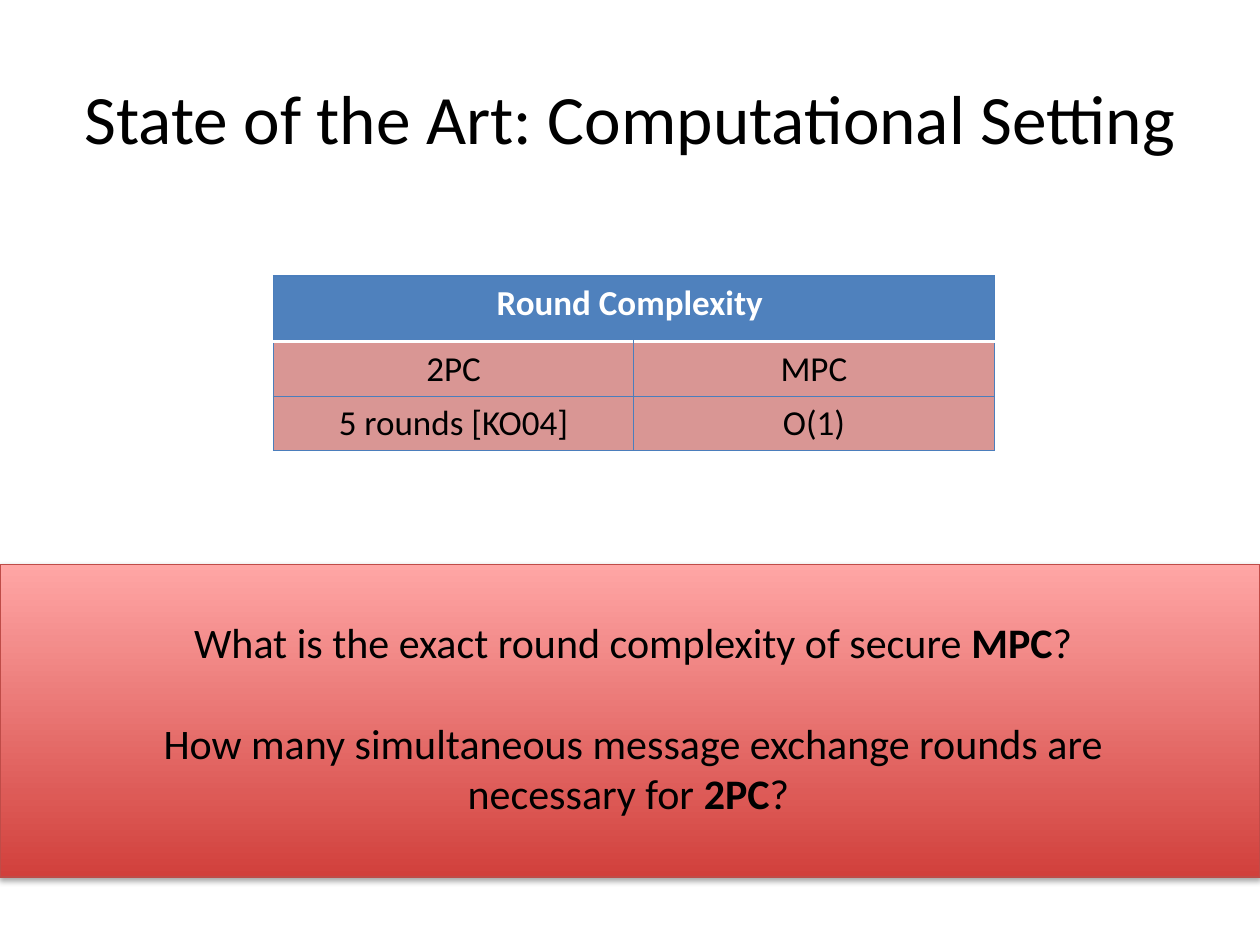
from dataclasses import dataclass

from lxml.etree import SubElement
from pptx import Presentation
from pptx.dml.color import RGBColor
from pptx.enum.shapes import MSO_SHAPE as Shape
from pptx.enum.text import MSO_ANCHOR as Anchor, PP_ALIGN as Align
from pptx.oxml.ns import qn
from pptx.util import Inches, Pt


@dataclass(frozen=True)
class Theme:
    font: str = "Calibri"
    text: str = "000000"
    white: str = "FFFFFF"
    header: str = "4F81BD"
    body: str = "D99694"
    border: str = "4B7EBC"
    banner_bottom: str = "D1403C"
    banner_top: str = "FFA6A5"
    banner_line: str = "BF4C48"
    title_size: float = 39.6
    question_size: float = 24
    table_size: float = 20
    thin: float = 0.75
    thick: float = 2


THEME = Theme()


def rgb(color):
    return RGBColor.from_string(color)


def write_text(frame, paragraphs, size, color=THEME.text, bold=False, gap=0):
    """Write centred paragraphs; each is a list of runs, every second run being emphasised."""
    for index, runs in enumerate(paragraphs):
        paragraph = frame.add_paragraph() if index else frame.paragraphs[0]
        paragraph.alignment = Align.CENTER
        if index:
            paragraph.space_before = Pt(gap)
        for position, text in enumerate(runs):
            run = paragraph.add_run()
            run.text = text
            run.font.name = THEME.font
            run.font.size = Pt(size)
            run.font.bold = bold or position % 2 == 1
            run.font.color.rgb = rgb(color)


def add_text_box(slide, left, top, width, height, paragraphs, anchor=Anchor.TOP, **text_format):
    box = slide.shapes.add_textbox(Inches(left), Inches(top), Inches(width), Inches(height))
    box.text_frame.word_wrap = True
    box.text_frame.vertical_anchor = anchor
    write_text(box.text_frame, paragraphs, **text_format)


def add_shadow(shape):
    effects = SubElement(shape._element.spPr, qn("a:effectLst"))
    shadow = SubElement(effects, qn("a:outerShdw"), blurRad=str(Pt(3.1)), dist=str(Pt(1.8)),
                        dir="5400000", rotWithShape="0")
    color = SubElement(shadow, qn("a:srgbClr"), val="000000")
    SubElement(color, qn("a:alpha"), val="35000")


def add_banner(slide, left, top, width, height):
    banner = slide.shapes.add_shape(
        Shape.RECTANGLE, Inches(left), Inches(top), Inches(width), Inches(height))
    banner.fill.gradient()
    banner.fill.gradient_angle = 90
    stops = banner.fill.gradient_stops
    for stop, position, color in zip(stops, (0, 1), (THEME.banner_bottom, THEME.banner_top)):
        stop.position = position
        stop.color.rgb = rgb(color)
    banner.line.color.rgb = rgb(THEME.banner_line)
    banner.line.width = Pt(THEME.thin)
    add_shadow(banner)


def set_borders(cell, white_side=None):
    """Draw thin borders, with a thick white one on the given side; they precede the fill."""
    properties = cell._tc.get_or_add_tcPr()
    for side in ("lnL", "lnR", "lnT", "lnB"):
        is_white = side == white_side
        width = THEME.thick if is_white else THEME.thin
        line = SubElement(properties, qn(f"a:{side}"), w=str(Pt(width)))
        fill = SubElement(line, qn("a:solidFill"))
        SubElement(fill, qn("a:srgbClr"), val=THEME.white if is_white else THEME.border)


def add_table(slide, left, top, column_width, row_heights, rows):
    """Add a table whose first row is one merged heading."""
    columns = len(rows[-1])
    table = slide.shapes.add_table(
        len(rows), columns, Inches(left), Inches(top),
        Inches(column_width * columns), Inches(sum(row_heights))).table
    for column in table.columns:
        column.width = Inches(column_width)
    for row, height in zip(table.rows, row_heights):
        row.height = Inches(height)
    table.cell(0, 0).merge(table.cell(0, columns - 1))
    white_sides = {0: "lnB", 1: "lnT"}
    for row_index, texts in enumerate(rows):
        is_header = row_index == 0
        for column_index in range(columns):
            cell = table.cell(row_index, column_index)
            set_borders(cell, white_sides.get(row_index))
            cell.fill.solid()
            cell.fill.fore_color.rgb = rgb(THEME.header if is_header else THEME.body)
            if not cell.is_spanned:
                write_text(cell.text_frame, [[texts[column_index]]], THEME.table_size,
                           color=THEME.white if is_header else THEME.text, bold=is_header)


def main():
    presentation = Presentation()
    presentation.slide_width = Inches(10)
    presentation.slide_height = Inches(7.5)
    slide = presentation.slides.add_slide(presentation.slide_layouts[6])

    add_text_box(slide, 0.5, 0.3, 9, 1.25, [["State of the Art: Computational Setting"]],
                 anchor=Anchor.MIDDLE, size=THEME.title_size)
    add_banner(slide, 0, 4.48, 10, 2.48)
    questions = [
        ["What is the exact round complexity of secure ", "MPC", "?"],
        ["How many simultaneous message exchange rounds are necessary for ", "2PC", "? "],
    ]
    add_text_box(slide, 0.85, 4.84, 8.35, 2.12, questions, size=THEME.question_size, gap=29)
    add_table(slide, 2.17, 2.19, 2.86, (0.52, 0.43, 0.43), [
        ["Round Complexity "],
        ["2PC", "MPC"],
        ["5 rounds [KO04]", "O(1)"],
    ])
    presentation.save("out.pptx")


if __name__ == "__main__":
    main()
